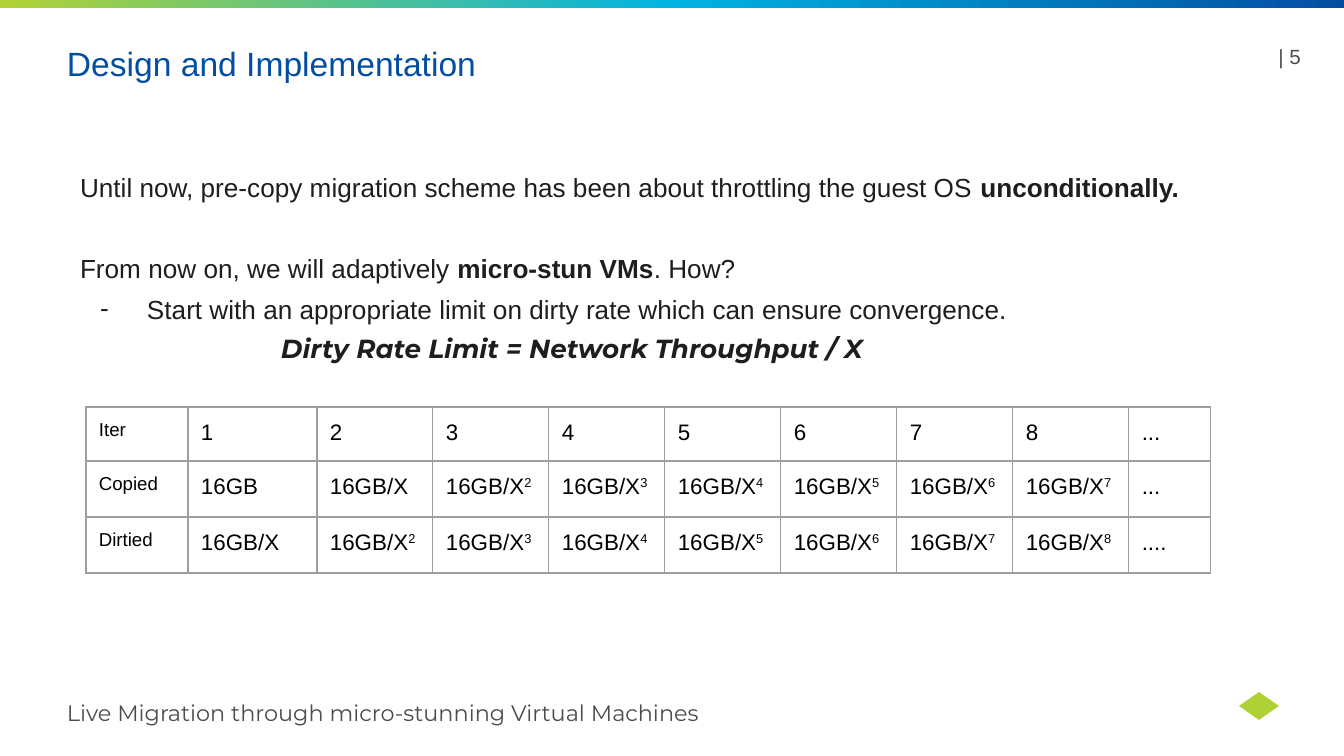
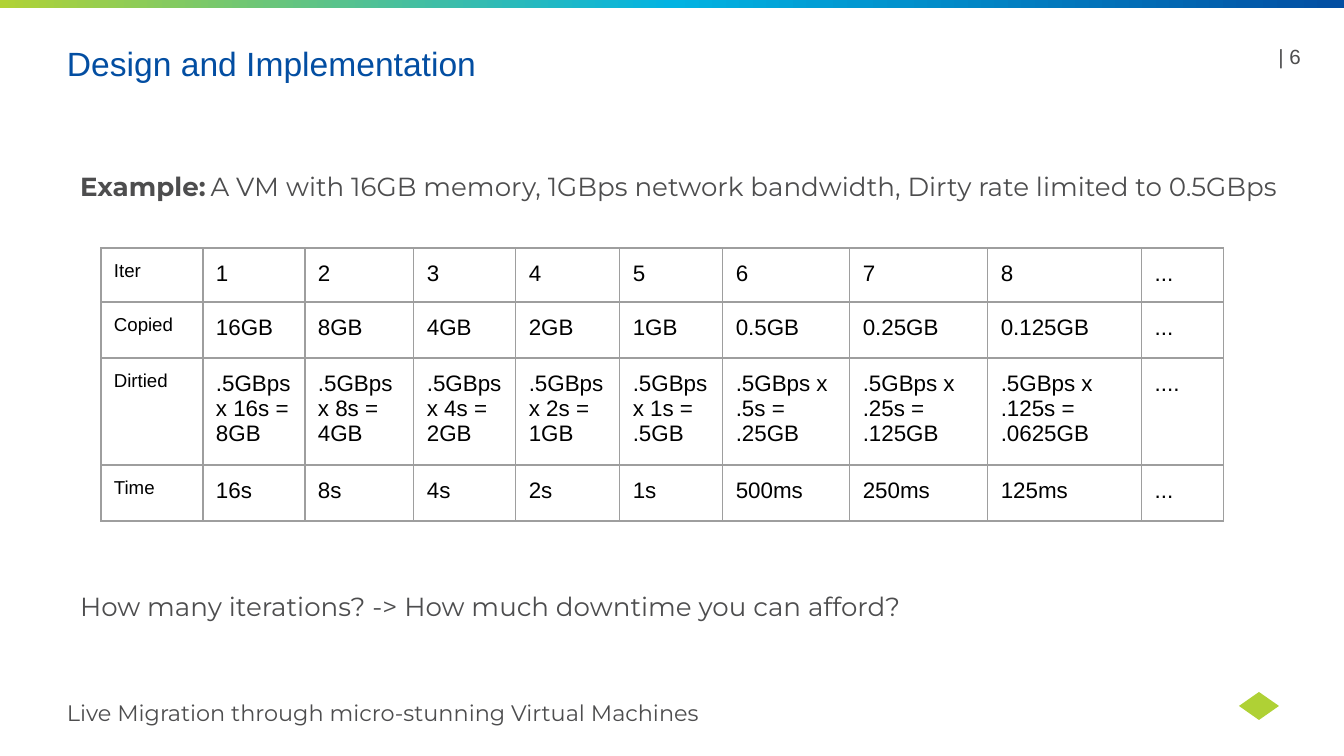
from lxml import etree
from pptx import Presentation
from pptx import util as u
from pptx.dml.color import RGBColor
from pptx.enum import shapes, text
from pptx.oxml.ns import qn

TITLE = "Design and Implementation"
FOOTER = "Live Migration through micro-stunning Virtual Machines"
BLUE, GREEN, CYAN = "034EA2", "B0D235", "02B3E2"
GREY, INK, BLACK, BORDER = "4D4D4E", "1E1E1E", "000000", "9E9E9E"
ITERATIONS = ["Iter", "1", "2", "3", "4", "5", "6", "7", "8", "..."]
POWERS = ["16GB/X"] + [f"16GB/X^{n}" for n in range(2, 9)]

SLIDES = [
    {
        "number": "| 5",
        "body_height": 286,
        "font": "Arial",
        "colour": INK,
        "line_spacing": 1.25,
        "body": [
            {"runs": [("Until now, pre-copy migration scheme has been about throttling the guest OS ", {}),
                      ("unconditionally.", {"bold": True})]},
            {"runs": [("From now on, we will adaptively ", {}), ("micro-stun VMs", {"bold": True}),
                      (". How?", {})], "before": 22},
            {"runs": [("Start with an appropriate limit on dirty rate which can ensure convergence.", {})],
             "before": 1, "margin": 67, "indent": -47, "bullet": "-"},
            {"runs": [("Dirty Rate Limit = Network Throughput / X",
                       {"font": "Montserrat", "bold": True, "italic": True})],
             "margin": 134, "indent": 67},
        ],
        "table_at": (86, 407),
        "columns": [102, 129] + [116] * 7 + [82],
        "row_heights": [54, 56, 56],
        "rows": [
            ITERATIONS,
            ["Copied", "16GB"] + POWERS[:7] + ["..."],
            ["Dirtied"] + POWERS + ["...."],
        ],
    },
    {
        "number": "| 6",
        "body_height": 551,
        "font": "Montserrat",
        "colour": GREY,
        "line_spacing": 1.2,
        "body": [
            {"runs": [("Example:", {"bold": True}), (" ", {"size": 10}),
                      ("A VM with 16GB memory, 1GBps network bandwidth, Dirty rate limited to 0.5GBps", {})]},
            {"runs": [("How many iterations? -> How much downtime you can afford?", {})], "before": 205},
        ],
        "table_at": (101, 248),
        "columns": [102, 102, 109, 102, 104, 103, 127, 138, 154, 82],
        "row_heights": [54, 56, 107, 56],
        "rows": [
            ITERATIONS,
            ["Copied", "16GB", "8GB", "4GB", "2GB", "1GB", "0.5GB", "0.25GB", "0.125GB", "..."],
            ["Dirtied", ".5GBps x 16s = 8GB", ".5GBps x 8s = 4GB", ".5GBps x 4s = 2GB",
             ".5GBps x 2s = 1GB", ".5GBps x 1s = .5GB", ".5GBps x .5s = .25GB",
             ".5GBps x .25s = .125GB", ".5GBps x .125s = .0625GB", "...."],
            ["Time", "16s", "8s", "4s", "2s", "1s", "500ms", "250ms", "125ms", "..."],
        ],
    },
]


def px(length):
    return u.Emu(round(length * 914400 / 134.4))


def colour(value):
    return RGBColor.from_string(value)


def place(part, left, top, width, height):
    part.left, part.top, part.width, part.height = map(px, (left, top, width, height))


def style(run, font, size, ink, bold=False, italic=False):
    run.font.name, run.font.size = font, u.Pt(size)
    run.font.bold, run.font.italic = bold, italic
    run.font.color.rgb = colour(ink)


def set_frame(frame, inset, anchor):
    frame.word_wrap = True
    frame.auto_size = text.MSO_AUTO_SIZE.NONE
    frame.vertical_anchor = anchor
    frame.margin_left = frame.margin_right = frame.margin_top = frame.margin_bottom = px(inset)


def add_line(part, words, font, size, ink, align=text.PP_ALIGN.LEFT, anchor=text.MSO_ANCHOR.MIDDLE):
    frame = part.text_frame
    frame.text = words
    set_frame(frame, 0, anchor)
    frame.paragraphs[0].alignment = align
    style(frame.paragraphs[0].runs[0], font, size, ink)


def add_plain(slide, preset, box, fill):
    part = slide.shapes.add_shape(preset, *map(px, box))
    part.shadow.inherit = False
    part.line.fill.background()
    part.fill.solid()
    part.fill.fore_color.rgb = colour(fill)
    return part


def add_band(slide):
    band = add_plain(slide, shapes.MSO_SHAPE.RECTANGLE, (0, 0, 1344, 8), GREEN)
    band.fill.gradient()
    band.fill.gradient_angle = 0
    stops = band._element.spPr.find(qn("a:gradFill")).find(qn("a:gsLst"))
    for stop in list(stops):
        stops.remove(stop)
    for position, ink in ((0, GREEN), (50, CYAN), (100, BLUE)):
        stop = etree.SubElement(stops, qn("a:gs"), pos=str(position * 1000))
        etree.SubElement(stop, qn("a:srgbClr"), val=ink)


def add_common(slide, number):
    add_band(slide)
    add_plain(slide, shapes.MSO_SHAPE.DIAMOND, (1239, 692, 40, 28), "AFD135")
    title = slide.shapes.title
    place(title, 67, 43, 1179, 40)
    add_line(title, TITLE, "Arial", 18, BLUE, anchor=text.MSO_ANCHOR.TOP)
    page = slide.shapes.add_textbox(*map(px, (1259, 43, 42, 26)))
    add_line(page, number, "Arial", 11, GREY, text.PP_ALIGN.RIGHT)
    footer = slide.shapes.add_textbox(*map(px, (67, 699, 672, 27)))
    add_line(footer, FOOTER, "Montserrat", 12, GREY)


def add_body(slide, content):
    body = slide.placeholders[1]
    place(body, 67, 151, 1262, content["body_height"])
    frame = body.text_frame
    set_frame(frame, 13, text.MSO_ANCHOR.TOP)
    for index, item in enumerate(content["body"]):
        paragraph = frame.add_paragraph() if index else frame.paragraphs[0]
        paragraph.line_spacing = content["line_spacing"]
        paragraph.space_before = u.Pt(item.get("before", 0))
        paragraph.space_after = u.Pt(0)
        properties = paragraph._p.get_or_add_pPr()
        properties.set("marL", str(px(item.get("margin", 0))))
        properties.set("indent", str(px(item.get("indent", 0))))
        if "bullet" in item:
            etree.SubElement(properties, qn("a:buChar"), char=item["bullet"])
        else:
            etree.SubElement(properties, qn("a:buNone"))
        for words, look in item["runs"]:
            run = paragraph.add_run()
            run.text = words
            style(run, **{"font": content["font"], "size": 14, "ink": content["colour"], **look})


def add_borders(cell):
    properties = cell._tc.get_or_add_tcPr()
    for position, side in enumerate(("lnL", "lnR", "lnT", "lnB")):
        border = etree.Element(qn(f"a:{side}"), w=str(u.Pt(0.75)))
        fill = etree.SubElement(border, qn("a:solidFill"))
        etree.SubElement(fill, qn("a:srgbClr"), val=BORDER)
        properties.insert(position, border)


def fill_cell(cell, words, size):
    cell.margin_left = cell.margin_right = cell.margin_top = cell.margin_bottom = px(13)
    cell.vertical_anchor = text.MSO_ANCHOR.TOP
    cell.fill.background()
    add_borders(cell)
    base, _, power = words.partition("^")
    paragraph = cell.text_frame.paragraphs[0]
    paragraph.text = base
    if power:
        exponent = paragraph.add_run()
        exponent.text = power
        exponent._r.get_or_add_rPr().set("baseline", "30000")
    for run in paragraph.runs:
        style(run, "Arial", size, BLACK)


def add_iterations(slide, content):
    columns, heights, rows = content["columns"], content["row_heights"], content["rows"]
    box = (*content["table_at"], sum(columns), sum(heights))
    table = slide.shapes.add_table(len(rows), len(columns), *map(px, box)).table
    table.first_row = table.horz_banding = False
    for column, width in zip(table.columns, columns):
        column.width = px(width)
    for row, height, values in zip(table.rows, heights, rows):
        row.height = px(height)
        for index, (cell, words) in enumerate(zip(row.cells, values)):
            fill_cell(cell, words, 12 if index else 10)


def main():
    deck = Presentation()
    deck.slide_width, deck.slide_height = px(1344), px(756)
    for content in SLIDES:
        slide = deck.slides.add_slide(deck.slide_layouts[1])
        add_common(slide, content["number"])
        add_body(slide, content)
        add_iterations(slide, content)
    deck.save("out.pptx")


if __name__ == "__main__":
    main()
